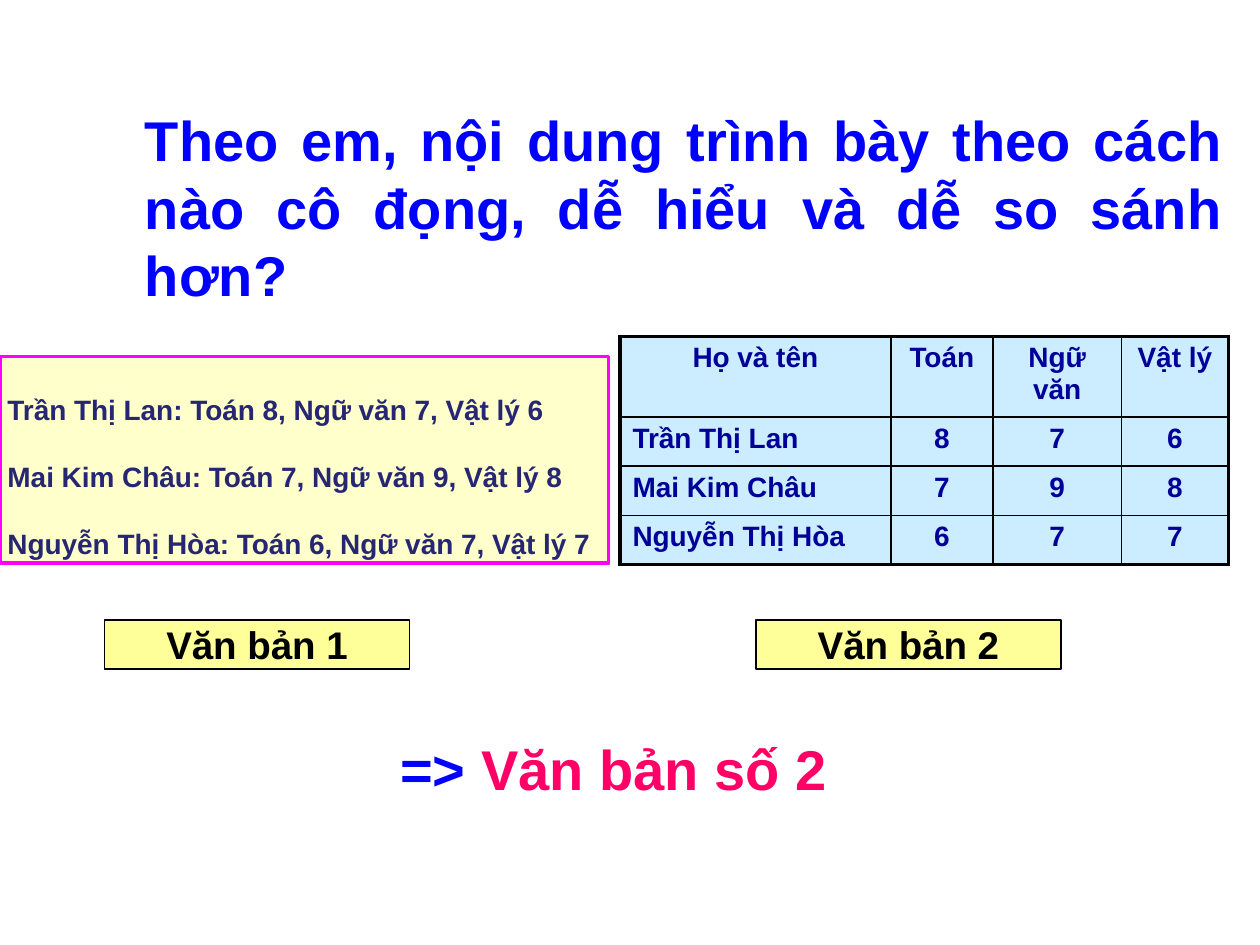
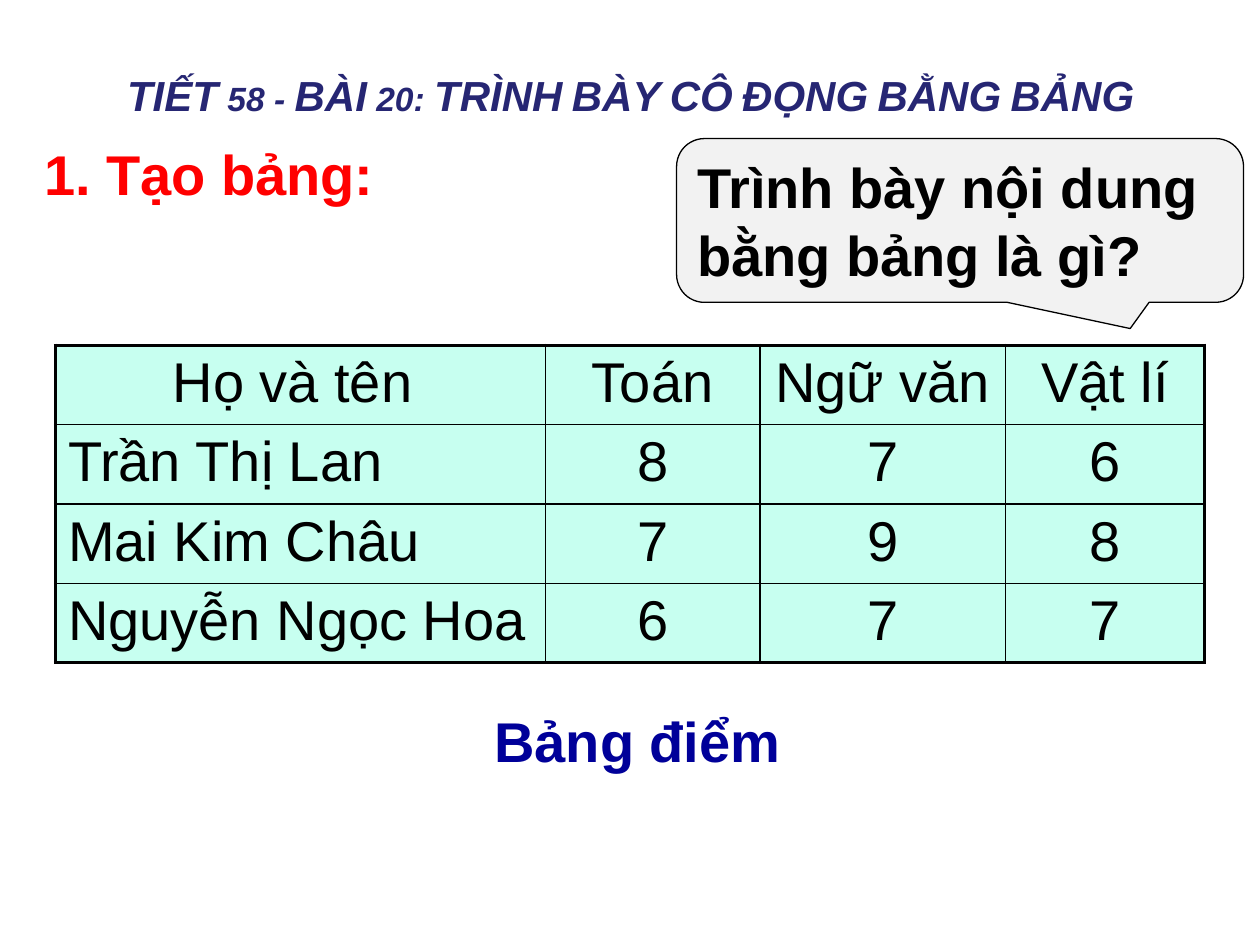
import pptx
import pptx.util
import pptx.dml.color
import pptx.enum.shapes
import pptx.enum.text
from lxml import etree

Inches, Pt = pptx.util.Inches, pptx.util.Pt
Align = pptx.enum.text.PP_ALIGN
Anchor = pptx.enum.text.MSO_ANCHOR
Kind = pptx.enum.shapes.MSO_SHAPE

FONT = "Arial"
COLORS = {
    "black": "000000", "blue": "0000FF", "navy": "000099", "indigo": "262673",
    "red": "FF0000", "rose": "FF0066", "pink": "FF00FF", "cream": "FFFFCC",
    "yellow": "FFFF99", "sky": "CCECFF", "mint": "C7FFF0", "grey": "F2F2F2",
}
TIGHT = (0.06, 0.01)
LOOSE = (0.1, 0.05)

QUESTION = "Theo em, nội dung trình bày theo cách nào cô đọng, dễ hiểu và dễ so sánh hơn?"
PROSE = [
    "Trần Thị Lan: Toán 8, Ngữ văn 7, Vật lý 6",
    "Mai Kim Châu: Toán 7, Ngữ văn 9, Vật lý 8",
    "Nguyễn Thị Hòa: Toán 6, Ngữ văn 7, Vật lý 7",
]
LABELS = [("Văn bản 1", 0.83), ("Văn bản 2", 6)]
ANSWER = [("=> ", "blue"), ("Văn bản số 2", "rose")]
MARKS = [
    ("Họ và tên", "Toán", "Ngữ văn", "Vật lý"),
    ("Trần Thị Lan", "8", "7", "6"),
    ("Mai Kim Châu", "7", "9", "8"),
    ("Nguyễn Thị Hòa", "6", "7", "7"),
]

LESSON = "TIẾT 58 - BÀI 20: TRÌNH BÀY CÔ ĐỌNG BẰNG BẢNG"
HEADING = "1. Tạo bảng:"
ASK = "Trình bày nội dung bằng bảng là gì?"
SCORES = [
    ("Họ và tên ", "Toán", "Ngữ văn", "Vật lí"),
    *MARKS[1:3],
    ("Nguyễn Ngọc Hoa", "6", "7", "7"),
]
CAPTION = "Bảng điểm"


def rgb(name):
    return pptx.dml.color.RGBColor.from_string(COLORS[name])


def style(para, size, color, bold=True, align=Align.LEFT):
    para.alignment = align
    font = para.font
    font.name, font.size, font.bold = FONT, Pt(size), bold
    font.color.rgb = rgb(color)


def write(shape, lines, size, color, align=Align.LEFT, pad=TIGHT,
          anchor=Anchor.TOP, space=None):
    """Fill a shape with one paragraph per line."""
    frame = shape.text_frame
    frame.word_wrap = True
    frame.auto_size = pptx.enum.text.MSO_AUTO_SIZE.NONE
    frame.vertical_anchor = anchor
    frame.margin_left = frame.margin_right = Inches(pad[0])
    frame.margin_top = frame.margin_bottom = Inches(pad[1])
    frame.text = "\n".join(lines)
    for para in frame.paragraphs:
        style(para, size, color, align=align)
        para.line_spacing = space
    return frame


def text(slide, box, *args, **opts):
    return write(slide.shapes.add_textbox(*map(Inches, box)), *args, **opts)


def panel(slide, kind, box, fill, line, width):
    shape = slide.shapes.add_shape(kind, *map(Inches, box))
    shape.shadow.inherit = False
    shape.fill.solid()
    shape.fill.fore_color.rgb = rgb(fill)
    shape.line.color.rgb = rgb(line)
    shape.line.width = Pt(width)
    return shape


def title(slide, box, *args, **opts):
    shape = slide.shapes.title
    shape.left, shape.top, shape.width, shape.height = map(Inches, box)
    return write(shape, *args, **opts)


def border(cell, side, width):
    props = cell._tc.get_or_add_tcPr()
    space = "{" + props.nsmap["a"] + "}"
    line = etree.SubElement(props, space + "ln" + side, w=str(Pt(width)))
    fill = etree.SubElement(line, space + "solidFill")
    etree.SubElement(fill, space + "srgbClr", val=COLORS["black"])


def grid(slide, rows, spot, widths, heights, fill, size, color, bold):
    """Add a table with a thick outer frame and thin inner lines."""
    last, end = len(rows) - 1, len(widths) - 1
    table = slide.shapes.add_table(
        len(rows), len(widths), *map(Inches, (*spot, sum(widths), sum(heights)))).table
    table.first_row = table.horz_banding = False
    for col, width in zip(table.columns, widths):
        col.width = Inches(width)
    for row, height in zip(table.rows, heights):
        row.height = Inches(height)
    for r, row in enumerate(rows):
        for c, value in enumerate(row):
            cell = table.cell(r, c)
            edges = {"L": c == 0, "R": c == end, "T": r == 0, "B": r == last}
            for side, outer in edges.items():
                border(cell, side, 2.25 if outer else 1)
            cell.fill.solid()
            cell.fill.fore_color.rgb = rgb(fill)
            cell.text = value
            align = Align.LEFT if r and not c else Align.CENTER
            style(cell.text_frame.paragraphs[0], size, color, bold, align)


def compare(slide):
    title(slide, (1.09, 0.83, 8.68, 1.64), [QUESTION], 32, "blue", Align.JUSTIFY)
    prose = panel(slide, Kind.FLOWCHART_PROCESS, (0, 2.83, 4.83, 1.64),
                  "cream", "pink", 2.25)
    write(prose, PROSE, 16, "indigo", Align.JUSTIFY, anchor=Anchor.MIDDLE, space=2.0)
    grid(slide, MARKS, (4.92, 2.67), (2.15, 0.81, 1.02, 0.85),
         (0.64, 0.39, 0.39, 0.39), "sky", 16, "navy", True)
    for label, left in LABELS:
        tag = panel(slide, Kind.RECTANGLE, (left, 4.92, 2.42, 0.39),
                    "yellow", "black", 0.75)
        write(tag, [label], 22, "black", Align.CENTER)
    frame = text(slide, (0.62, 5.78, 8.5, 0.64), [""], 32, "blue", Align.CENTER, LOOSE)
    for part, color in ANSWER:
        run = frame.paragraphs[0].add_run()
        run.text = part
        run.font.color.rgb = rgb(color)


def define(slide):
    frame = title(slide, (0.38, 0.25, 9.25, 0.75), [LESSON], 24, "indigo",
                  Align.CENTER, LOOSE, Anchor.BOTTOM)
    para = frame.paragraphs[0]
    para.font.italic = True
    para.runs[0]._r.get_or_add_rPr().set("cap", "small")
    text(slide, (0.33, 1.1, 3.17, 0.56), [HEADING], 32, "red", pad=(0.02, 0.01))
    grid(slide, SCORES, (0.44, 2.74), (3.89, 1.7, 1.95, 1.58), [0.63] * 4,
         "mint", 32, "black", False)
    bubble = panel(slide, Kind.ROUNDED_RECTANGULAR_CALLOUT, (5.37, 1.1, 4.5, 1.3),
                   "grey", "black", 0.75)
    for i, value in enumerate((0.3, 0.66, 0.17)):
        bubble.adjustments[i] = value
    write(bubble, [ASK], 32, "black", pad=LOOSE)
    text(slide, (3.62, 5.6, 2.88, 0.56), [CAPTION], 32, "navy", Align.CENTER)


def main():
    deck = pptx.Presentation()
    deck.slide_width, deck.slide_height = Inches(10), Inches(7.5)
    for build in (compare, define):
        build(deck.slides.add_slide(deck.slide_layouts[5]))
    deck.save("out.pptx")


if __name__ == "__main__":
    main()
